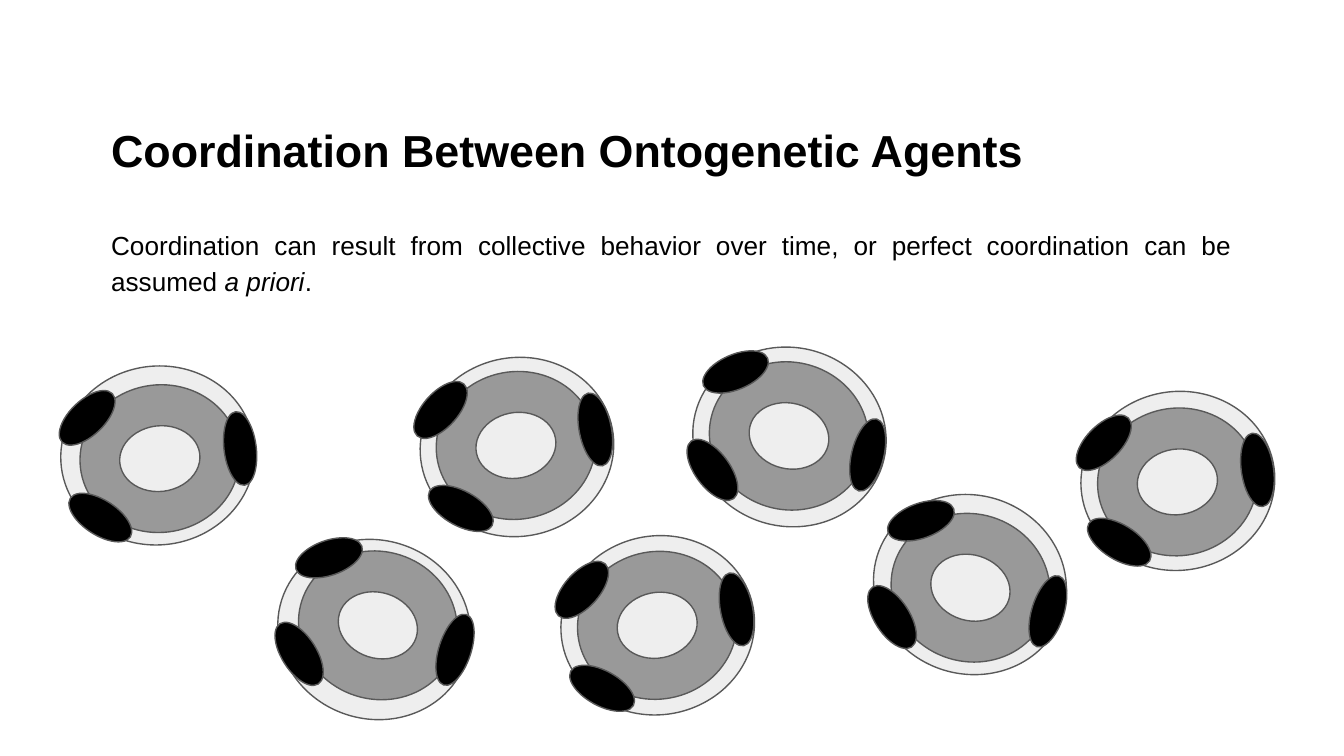
from dataclasses import dataclass
from math import cos, radians, sin

from pptx import Presentation
from pptx.dml.color import RGBColor
from pptx.enum.shapes import MSO_SHAPE
from pptx.enum.text import MSO_ANCHOR, MSO_AUTO_SIZE, PP_ALIGN
from pptx.util import Cm, Pt


@dataclass(frozen=True)
class Theme:
    font: str = "Arial"
    text: str = "000000"
    light: str = "EEEEEE"
    grey: str = "999999"
    black: str = "000000"
    outline: str = "595959"
    title_size: float = 24
    body_size: float = 14
    line_width: float = 0.75


theme = Theme()


def write_text(shape, runs, size, bold=False, align=PP_ALIGN.LEFT, spacing=1.0):
    """Fill a shape with one paragraph of (text, italic) runs."""
    frame = shape.text_frame
    frame.word_wrap = True
    frame.auto_size = MSO_AUTO_SIZE.NONE
    frame.vertical_anchor = MSO_ANCHOR.TOP
    frame.margin_left = frame.margin_right = Cm(0.25)
    frame.margin_top = frame.margin_bottom = Cm(0.25)
    paragraph = frame.paragraphs[0]
    paragraph.alignment = align
    paragraph.line_spacing = spacing
    for text, italic in runs:
        run = paragraph.add_run()
        run.text = text
        run.font.name = theme.font
        run.font.size = Pt(size)
        run.font.bold = bold
        run.font.italic = italic
        run.font.color.rgb = RGBColor.from_string(theme.text)


def add_ellipse(slide, center, size, rotation, color):
    """Draw a rotated, outlined ellipse around its centre (cm)."""
    (x, y), (width, height) = center, size
    shape = slide.shapes.add_shape(
        MSO_SHAPE.OVAL, Cm(x - width / 2), Cm(y - height / 2), Cm(width), Cm(height))
    shape.rotation = rotation % 360
    shape.shadow.inherit = False
    shape.fill.solid()
    shape.fill.fore_color.rgb = RGBColor.from_string(color)
    shape.line.color.rgb = RGBColor.from_string(theme.outline)
    shape.line.width = Pt(theme.line_width)


presentation = Presentation()
presentation.slide_width = Cm(25.4)
presentation.slide_height = Cm(14.29)
slide = presentation.slides.add_slide(presentation.slide_layouts[5])

# Title
title = slide.shapes.title
title.left, title.top, title.width, title.height = Cm(1.85), Cm(2.06), Cm(18.24), Cm(1.55)
write_text(title, [("Coordination Between Ontogenetic Agents", False)],
           size=theme.title_size, bold=True)

# Statement
statement = slide.shapes.add_textbox(Cm(1.85), Cm(3.99), Cm(21.69), Cm(1.8))
write_text(statement, [
    ("Coordination can result from collective behavior over time, "
     "or perfect coordination can be assumed ", False),
    ("a priori", True),
    (".", False),
], size=theme.body_size, align=PP_ALIGN.JUSTIFY, spacing=1.15)

# Agent geometry, before the agent is turned
shell_size, disc_size, nucleus_size = (3.38, 3.67), (2.79, 3.02), (1.24, 1.52)
sensors = [  # offset from the disc centre, size, own rotation
    ((-0.93, 1.27), (0.66, 1.32), -37.1),
    ((0.97, 1.25), (0.66, 1.35), 39.8),
    ((-0.01, -1.53), (0.61, 1.40), 90),
]

# Agents: disc centre, shell centre, rotation
agents = [
    ((18.34, 11.11), (18.33, 11.05), 107.3),
    ((22.25, 9.11), (22.26, 9.09), 81.8),
    ((14.91, 8.24), (14.92, 8.26), 103.9),
    ((12.42, 11.82), (12.43, 11.82), 79),
    ((9.75, 8.42), (9.77, 8.45), 79),
    ((7.14, 11.82), (7.07, 11.9), 107.9),
    ((3.02, 8.67), (2.98, 8.61), 83.1),
]
for disc, shell, rotation in agents:
    add_ellipse(slide, shell, shell_size, rotation, theme.light)
    add_ellipse(slide, disc, disc_size, rotation, theme.grey)
    cosine, sine = cos(radians(rotation)), sin(radians(rotation))
    for (dx, dy), size, turn in sensors:
        center = (disc[0] + dx * cosine - dy * sine,
                  disc[1] + dx * sine + dy * cosine)
        add_ellipse(slide, center, size, rotation + turn, theme.black)
    add_ellipse(slide, disc, nucleus_size, rotation, theme.light)

presentation.save("out.pptx")
